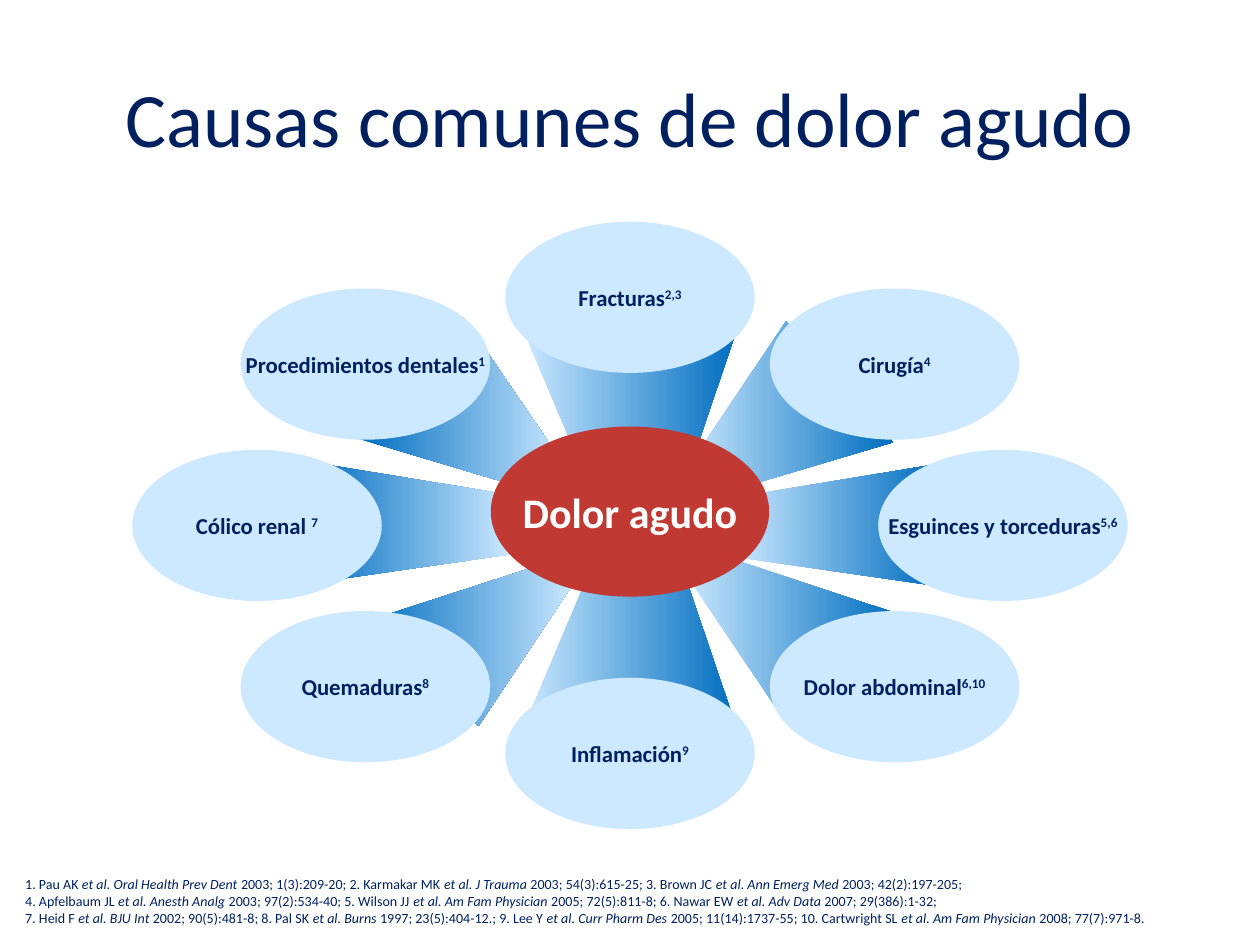
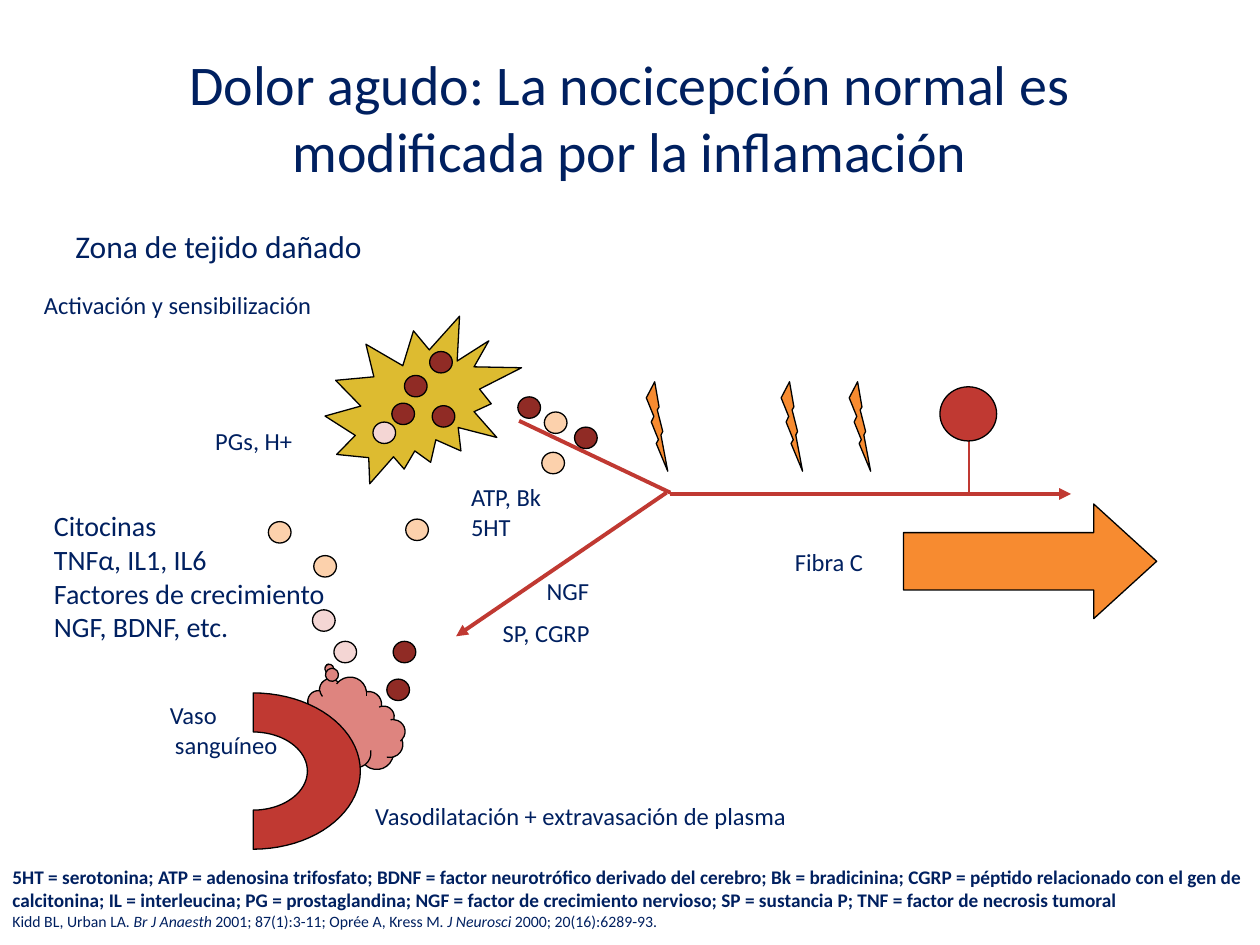
from math import cos, pi, sin
from lxml import etree
from pptx import Presentation, util as u
from pptx.dml.color import RGBColor
from pptx.enum import shapes, text
from pptx.oxml.ns import qn

NAVY, RED, SKY, BLUE = "002060", "C03932", "CCE9FF", "006DBF"
WHITE, BLACK, ORANGE, GOLD = "FFFFFF", "000000", "F78B30", "DDBB30"
PEACH, PINK, WINE, ROSE = "FCD1AC", "F4D6D4", "902B25", "DE847F"
FONT = "Calibri"
KIND = shapes.MSO_SHAPE
MID = text.MSO_ANCHOR.MIDDLE
LOW = text.MSO_ANCHOR.BOTTOM

CAUSES = [
    ("Fracturas^2,3", 0, -1.81),
    ("Cirugía^4", 2.1, -1.28),
    ("Esguinces y torceduras^5,6", 2.96, 0),
    ("Dolor abdominal^6,10", 2.1, 1.28),
    ("Inflamación^9", 0, 1.81),
    ("Quemaduras^8", -2.1, 1.28),
    ("Cólico renal ^7", -2.96, 0),
    ("Procedimientos dentales^1", -2.1, -1.28),
]
RAYS_LEFT = [
    [(3.8, 5.76), (2.88, 4.94), (4.18, 4.52), (4.58, 4.59)],
    [(2.48, 3.67), (2.46, 4.63), (4.05, 4.4), (4.04, 4.08), (3.94, 3.91)],
    [(3.68, 2.52), (2.84, 3.48), (4.08, 3.85), (4.5, 3.85), (4.39, 3.56)],
]
RAYS_RIGHT = [
    [(4.15, 5.79), (5.85, 5.79), (5.42, 4.52), (4.68, 4.54)],
    [(4.15, 2.61), (5.85, 2.61), (5.42, 3.88), (4.68, 3.86)],
    [(6.24, 2.55), (7.09, 3.51), (5.85, 3.88), (5.42, 3.88), (5.54, 3.59)],
    [(7.4, 3.69), (7.43, 4.65), (5.83, 4.42), (5.85, 4.09), (5.94, 3.93)],
    [(6.21, 5.69), (7.12, 4.87), (5.82, 4.44), (5.42, 4.52)],
]
SOURCES = (
    "1. Pau AK *et al. Oral Health Prev Dent* 2003; 1(3):209-20; "
    "2. Karmakar MK *et al. J Trauma* 2003; 54(3):615-25; "
    "3. Brown JC *et al. Ann Emerg Med* 2003; 42(2):197-205;\n"
    "4. Apfelbaum JL *et al. Anesth Analg* 2003; 97(2):534-40; "
    "5. Wilson JJ *et al. Am Fam Physician* 2005; 72(5):811-8; "
    "6. Nawar EW *et al. Adv Data* 2007; 29(386):1-32;\n"
    "7. Heid F *et al. BJU Int* 2002; 90(5):481-8; "
    "8. Pal SK *et al. Burns* 1997; 23(5):404-12.; "
    "9. Lee Y *et al. Curr Pharm Des* 2005; 11(14):1737-55; "
    "10. Cartwright SL *et al. Am Fam Physician* 2008; 77(7):971-8."
)

NERVES = [
    ((4.12, 3.34), (5.32, 3.91), 2.25, False),
    ((5.29, 3.91), (3.62, 5.05), 2.25, True),
    ((5.32, 3.92), (8.5, 3.92), 2.25, True),
    ((7.69, 3.92), (7.69, 3.5), 0.75, False),
]
DOTS = {
    WINE: [(3.12, 5.09), (3.07, 5.39), (4.11, 3.15), (3.41, 2.79),
           (4.56, 3.39), (3.21, 2.98), (3.43, 3.22), (3.11, 3.2)],
    PEACH: [(2.13, 4.14), (2.49, 4.41), (3.22, 4.12), (4.3, 3.59),
            (4.32, 3.27)],
    PINK: [(2.48, 4.84), (2.65, 5.09), (2.96, 3.35)],
}
BOLTS = [5.13, 6.2, 6.74]
LABELS = [
    (["Zona de tejido dañado"], (0.5, 1.75, 2.75, 0.4), 18, True),
    (["Activación y sensibilización"], (0.25, 2.25, 2.83, 0.34), 14, True),
    (["PGs, H+"], (1.61, 3.33, 0.82, 0.34), 14, False),
    (["ATP, Bk", "5HT"], (3.64, 3.78, 0.76, 0.57), 14, False),
    (["NGF"], (4.24, 4.52, 0.54, 0.34), 14, False),
    (["SP, CGRP"], (3.89, 4.86, 0.92, 0.34), 14, False),
    (["Fibra C"], (6.21, 4.29, 0.79, 0.34), 14, False),
    (["Vasodilatación + extravasación de plasma"],
     (2.88, 6.31, 3.54, 0.34), 14, True),
    (["Citocinas", "TNFα, IL1, IL6", "Factores de crecimiento",
      "NGF, BDNF, etc."], (0.33, 3.99, 2.38, 1.18), 16, True),
]
VESSEL = ["Vaso", "sanguíneo"]
TERMS = (
    "5HT = serotonina; ATP = adenosina trifosfato; BDNF = factor "
    "neurotrófico derivado del cerebro; Bk = bradicinina; CGRP = péptido "
    "relacionado con el gen de calcitonina; IL = interleucina; PG = "
    "prostaglandina; NGF = factor de crecimiento nervioso; SP = sustancia P; "
    "TNF = factor de necrosis tumoral"
)
STUDIES = (
    "Kidd BL, Urban LA*. Br J Anaesth* 2001; 87(1):3-11; "
    "Oprée A, Kress M*. J Neurosci* 2000; 20(16):6289-93."
)


def rgb(code):
    return RGBColor.from_string(code)


def place(at):
    return [u.Inches(v) for v in at]


def style(font, size, color=NAVY, bold=False):
    font.name, font.size, font.bold = FONT, u.Pt(size), bold
    font.color.rgb = rgb(color)


def write(frame, lines, size, color=NAVY, bold=False, center=False):
    frame.text = "\n".join(lines)
    for para in frame.paragraphs:
        if center:
            para.alignment = text.PP_ALIGN.CENTER
        for run in para.runs:
            style(run.font, size, color, bold)


def cite(para, words, size):
    for row, line in enumerate(words.split("\n")):
        if row:
            para.add_line_break()
        for turn, part in enumerate(line.split("*")):
            run = para.add_run()
            run.text = part
            style(run.font, size)
            run.font.italic = turn % 2 == 1


def trim(frame):
    frame.margin_left = frame.margin_right = 0
    frame.margin_top = frame.margin_bottom = 0


def box(page, lines, at, size, wrap=True, **look):
    frame = page.shapes.add_textbox(*place(at)).text_frame
    frame.word_wrap = wrap
    write(frame, lines, size, **look)
    return frame


def title(page, words, size):
    frame = box(page, [words], (0.5, 0.3, 9, 1.25), size, center=True)
    frame.vertical_anchor = MID


def paint(shape, color, edge=None):
    shape.shadow.inherit = False
    shape.fill.solid()
    shape.fill.fore_color.rgb = rgb(color)
    if edge:
        shape.line.color.rgb = rgb(edge)
        shape.line.width = u.Pt(0.75)
    else:
        shape.line.fill.background()


def draw(page, kind, at, color, edge=BLACK):
    shape = page.shapes.add_shape(kind, *place(at))
    paint(shape, color, edge)
    return shape


def outline(page, points):
    first, *rest = [place(point) for point in points]
    pen = page.shapes.build_freeform(*first)
    pen.add_line_segments(rest, close=True)
    return pen.convert_to_shape()


def ray(page, points, start, end):
    shape = outline(page, points)
    paint(shape, start)
    shape.fill.gradient()
    shape.fill.gradient_angle = 0
    for stop, color, spot in zip(shape.fill.gradient_stops, (start, end), (0, 1)):
        stop.color.rgb = rgb(color)
        stop.position = spot


def oval(page, words, mid, size, color, points, ink):
    (x, y), (w, h) = mid, size
    at = (x - w / 2, y - h / 2, w, h)
    frame = draw(page, KIND.OVAL, at, color, None).text_frame
    trim(frame)
    frame.word_wrap = False
    frame.vertical_anchor = MID
    name, _, note = words.partition("^")
    write(frame, [name], points, ink, True, True)
    if note:
        run = frame.paragraphs[0].add_run()
        run.text = note
        style(run.font, points, ink, True)
        run._r.get_or_add_rPr().set("baseline", "30000")


def nerve(page, start, end, width, arrow):
    line = page.shapes.add_connector(
        shapes.MSO_CONNECTOR.STRAIGHT, *place(start + end))
    line.line.color.rgb = rgb(RED)
    line.line.width = u.Pt(width)
    props = line._element.spPr
    if arrow:
        etree.SubElement(props.find(qn("a:ln")), qn("a:tailEnd"), type="triangle")
    etree.SubElement(props, qn("a:effectLst"))


def arc(mid, rx, ry, steps=40):
    x, y = mid
    turns = [pi * (n / steps - 0.5) for n in range(steps + 1)]
    return [(x + rx * cos(t), y + ry * sin(t)) for t in turns]


def causes(page):
    for points in RAYS_LEFT:
        ray(page, points, BLUE, SKY)
    for points in RAYS_RIGHT:
        ray(page, points, SKY, BLUE)
    title(page, "Causas comunes de dolor agudo", 44)
    oval(page, "Dolor agudo", (5, 4.06), (2.21, 1.35), RED, 24, WHITE)
    for words, dx, dy in CAUSES:
        oval(page, words, (5 + dx, 4.17 + dy), (1.98, 1.2), SKY, 13, NAVY)
    frame = box(page, [], (0.2, 6.95, 9.25, 0.4), 8)
    trim(frame)
    frame.vertical_anchor = LOW
    cite(frame.paragraphs[0], SOURCES, 8)


def pathway(page):
    for item in NERVES:
        nerve(page, *item)
    draw(page, KIND.EXPLOSION2, (2.58, 2.51, 1.56, 1.33), GOLD)
    cloud = draw(page, KIND.CLOUD_CALLOUT, (2.39, 5.44, 0.84, 0.62), ROSE)
    cloud.rotation = 52.9
    cloud.adjustments[0], cloud.adjustments[1] = -0.585, -0.184
    for color, spots in DOTS.items():
        for spot in spots:
            draw(page, KIND.OVAL, spot + (0.18, 0.17), color)
    draw(page, KIND.OVAL, (7.46, 3.07, 0.45, 0.43), RED)
    arrow = draw(page, KIND.RIGHT_ARROW, (7.17, 4, 2.01, 0.91), ORANGE)
    arrow.adjustments[1] = 0.549
    for x in BOLTS:
        draw(page, KIND.LIGHTNING_BOLT, (x, 3.03, 0.17, 0.71), ORANGE)
    hub = (2.01, 6.12)
    ring = arc(hub, 0.85, 0.62) + arc(hub, 0.43, 0.31)[::-1]
    paint(outline(page, ring), RED, BLACK)
    for lines, at, size, wrap in LABELS:
        box(page, lines, at, size, wrap)
    frame = box(page, VESSEL, (1.25, 5.51, 1.11, 0.57), 14, False)
    frame.paragraphs[1]._p.get_or_add_pPr().set("marL", str(u.Inches(0.04)))
    title(page, "Dolor agudo: La nocicepción normal es "
                "modificada por la inflamación", 32)
    frame = box(page, [TERMS], (0, 6.82, 10, 0.77), 11, bold=True)
    cite(frame.add_paragraph(), STUDIES, 9)


def main():
    deck = Presentation()
    deck.slide_width, deck.slide_height = u.Inches(10), u.Inches(7.5)
    for build in (causes, pathway):
        build(deck.slides.add_slide(deck.slide_layouts[6]))
    deck.save("out.pptx")


if __name__ == "__main__":
    main()
